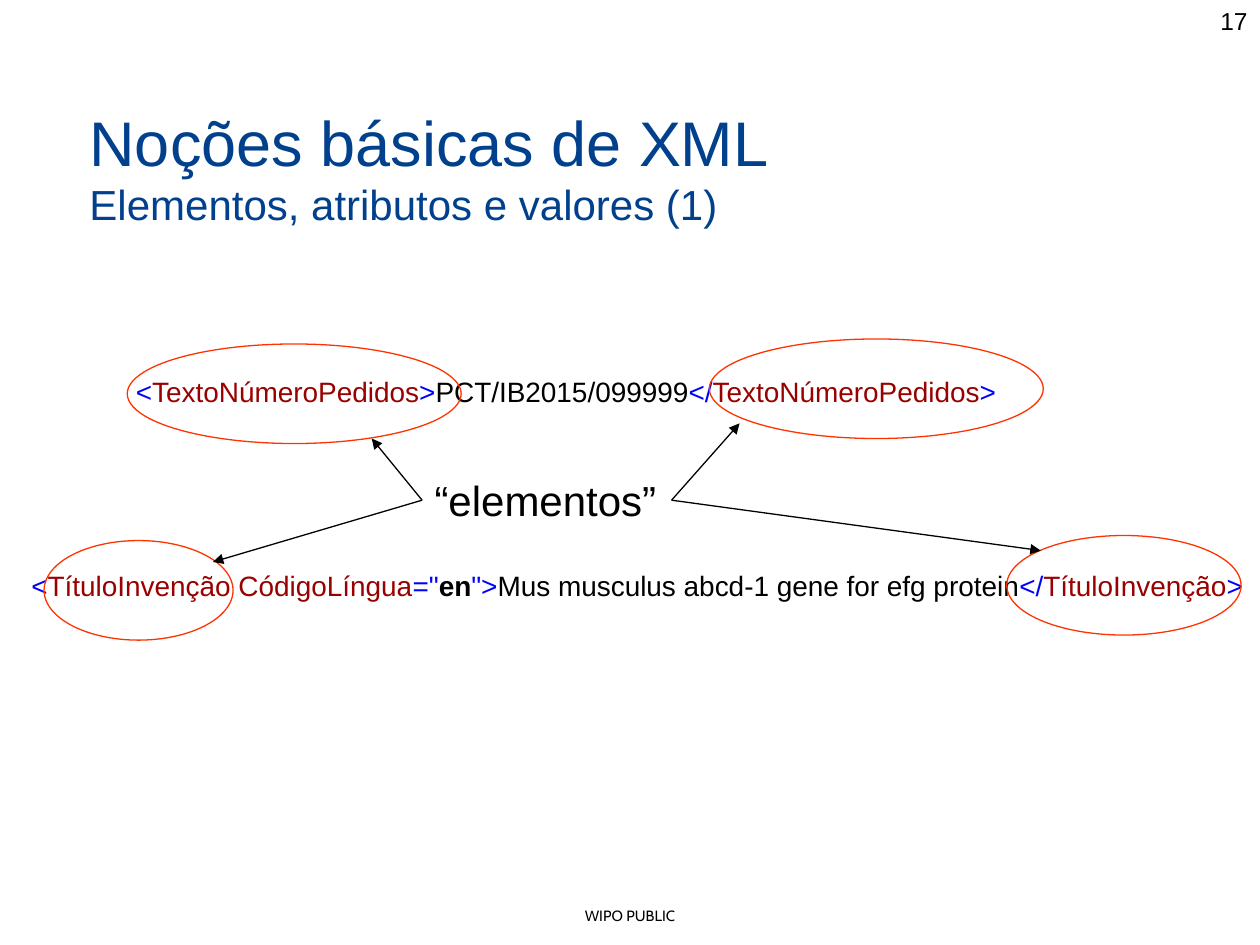
from lxml import etree
from pptx import Presentation
from pptx.dml.color import RGBColor
from pptx.enum.shapes import MSO_CONNECTOR, MSO_SHAPE
from pptx.enum.text import MSO_ANCHOR, MSO_AUTO_SIZE, PP_ALIGN
from pptx.oxml.ns import qn
from pptx.util import Inches, Pt

LEFT, CENTER, RIGHT = PP_ALIGN.LEFT, PP_ALIGN.CENTER, PP_ALIGN.RIGHT
LEFT_SIDE, RIGHT_SIDE = 1, 3
COLORS = {
    "title": "00408C",
    "text": "000000",
    "mark": "0000FF",
    "name": "990000",
    "ring": "FF3300",
}


def rgb(key):
    return RGBColor.from_string(COLORS[key])


def format_run(r, size, color="text", font="Arial", bold=False):
    r.font.size = Pt(size)
    r.font.name = font
    r.font.bold = bold
    r.font.color.rgb = rgb(color)


def add_title(s, lines):
    """Fill the title placeholder with (text, size) lines."""
    sp = s.shapes.title
    sp.left, sp.top, sp.width, sp.height = map(Inches, (0.64, 0.72, 9, 1.25))
    tf = sp.text_frame
    tf.auto_size = MSO_AUTO_SIZE.NONE
    tf.vertical_anchor = MSO_ANCHOR.TOP
    tf.margin_left = Inches(0.07)
    tf.margin_top = Inches(0.1)
    tf.text = "\n".join(text for text, _ in lines)
    for p, (_, size) in zip(tf.paragraphs, lines):
        p.alignment = LEFT
        format_run(p.runs[0], size, "title")


def add_text(s, box, runs, size, font="Arial", align=LEFT, wrap=False):
    """Add one line of (text, colour key, bold) runs."""
    sp = s.shapes.add_textbox(*map(Inches, box))
    tf = sp.text_frame
    tf.word_wrap = wrap
    if not wrap:
        tf.auto_size = MSO_AUTO_SIZE.SHAPE_TO_FIT_TEXT
    p = tf.paragraphs[0]
    p.alignment = align
    for text, color, bold in runs:
        r = p.add_run()
        r.text = text
        format_run(r, size, color, font, bold)
    return sp


def plain(text):
    return [(text, "text", False)]


def tagged(name, value, attribute=None):
    """Runs for an XML element with an optional (name, value) attribute."""
    runs = [("<", "mark", False)]
    if attribute:
        key, setting = attribute
        runs += [(f"{name} {key}", "name", False), ('="', "mark", False),
                 (setting, "text", True), ('">', "mark", False)]
    else:
        runs += [(name, "name", False), (">", "mark", False)]
    return runs + plain(value) + [("</", "mark", False), (name, "name", False),
                                  (">", "mark", False)]


def add_ring(s, left, top, width):
    sp = s.shapes.add_shape(MSO_SHAPE.OVAL, Inches(left), Inches(top),
                            Inches(width), Inches(0.79))
    sp.shadow.inherit = False
    sp.fill.background()
    sp.line.color.rgb = rgb("ring")
    sp.line.width = Pt(0.75)


def add_arrow(s, label, side, x, y):
    """Draw an arrow from a side of the label to the point x, y."""
    cn = s.shapes.add_connector(MSO_CONNECTOR.STRAIGHT, 0, 0, Inches(x), Inches(y))
    cn.begin_connect(label, side)
    cn.line.color.rgb = rgb("text")
    cn.line.width = Pt(0.75)
    etree.SubElement(cn.line._get_or_add_ln(), qn("a:tailEnd"), type="triangle")
    etree.SubElement(cn._element.spPr, qn("a:effectLst"))


def main():
    prs = Presentation()
    prs.slide_width, prs.slide_height = Inches(10), Inches(7.5)
    s = prs.slides.add_slide(prs.slide_layouts[5])

    add_text(s, (0, 7.15, 10, 0.24), plain("WIPO PUBLIC"), 8.5, "Cabin", CENTER, True)
    add_text(s, (7.67, 0, 2.33, 0.52), plain("17"), 14, align=RIGHT, wrap=True)
    add_title(s, [("Noções básicas de XML", 36),
                  ("Elementos, atributos e valores (1)", 24)])

    add_text(s, (0.98, 2.92, 7.09, 0.37),
             tagged("TextoNúmeroPedidos", "PCT/IB2015/099999"), 16)
    add_text(s, (0.15, 4.46, 10.22, 0.37),
             tagged("TítuloInvenção", "Mus musculus abcd-1 gene for efg protein",
                    ("CódigoLíngua", "en")), 16)

    for ring in ((1.01, 2.73, 2.65), (0.35, 4.29, 1.5),
                 (5.63, 2.69, 2.65), (7.99, 4.25, 1.86)):
        add_ring(s, *ring)

    label = add_text(s, (3.35, 3.72, 1.98, 0.5), plain("“elementos”"), 24)
    for side, x, y in ((RIGHT_SIDE, 5.87, 3.36), (RIGHT_SIDE, 8.26, 4.37),
                       (LEFT_SIDE, 2.95, 3.48), (LEFT_SIDE, 1.69, 4.46)):
        add_arrow(s, label, side, x, y)

    prs.save("out.pptx")


if __name__ == "__main__":
    main()
